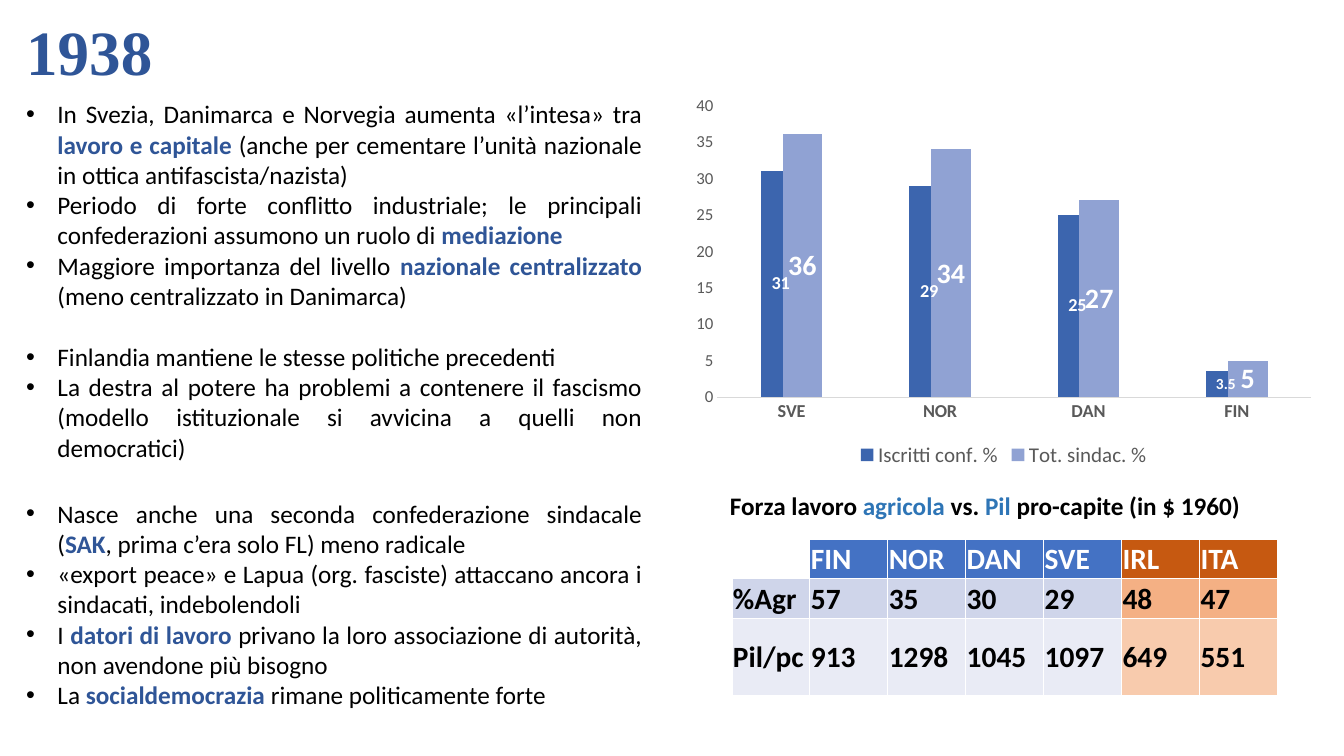
import pptx
import pptx.chart.data
import pptx.dml.color
import pptx.enum.chart
import pptx.enum.text
import pptx.oxml
import pptx.oxml.ns
import pptx.util

Inches, Pt = pptx.util.Inches, pptx.util.Pt
RGB = pptx.dml.color.RGBColor.from_string
ALIGN = pptx.enum.text.PP_ALIGN

COLORS = {
    "navy": "2F5597", "sky": "2E75B6", "black": "000000", "white": "FFFFFF",
    "gray": "595959", "axis": "D9D9D9", "members": "3C65AE", "union": "90A2D3",
}
NORDIC_FILLS = ["4472C4", "CFD5EA", "E9EBF5"]
OTHER_FILLS = ["C65911", "F4B084", "F8CBAD"]


def style(font, size, color, bold=False, name="Calibri"):
    font.size, font.bold, font.name = Pt(size), bold, name
    font.color.rgb = RGB(COLORS[color])


def add_marked_text(paragraph, text, accent, bold=False):
    """Write text in which *starred* parts take the accent colour and bold."""
    for i, part in enumerate(text.split("*")):
        run = paragraph.add_run()
        run.text = part
        style(run.font, 18, accent if i % 2 else "black", bold or i % 2 == 1)


prs = pptx.Presentation()
prs.slide_width, prs.slide_height = Inches(13.33), Inches(7.5)
slide = prs.slides.add_slide(prs.slide_layouts.get_by_name("Two Content"))
year, before_split, after_split = slide.placeholders

# Title
year.left, year.top, year.width, year.height = map(Inches, (0.16, 0.07, 2.28, 0.86))
year.text_frame.text = "1938"
year.text_frame.vertical_anchor = pptx.enum.text.MSO_ANCHOR.TOP
year.text_frame.word_wrap = False
year.text_frame.paragraphs[0].alignment = ALIGN.LEFT
style(year.text_frame.paragraphs[0].runs[0].font, 45, "navy", True, "Times New Roman")

# Bulleted lists: each holds groups of points with a gap between groups
nordic_points = [
    ["In Svezia, Danimarca e Norvegia aumenta «l’intesa» tra *lavoro e capitale *"
     "(anche per cementare l’unità nazionale in ottica antifascista/nazista)",
     "Periodo di forte conflitto industriale; le principali confederazioni "
     "assumono un ruolo di *mediazione*",
     "Maggiore importanza del livello *nazionale centralizzato *"
     "(meno centralizzato in Danimarca)"],
    ["Finlandia mantiene le stesse politiche precedenti",
     "La destra al potere ha problemi a contenere il fascismo (modello "
     "istituzionale si avvicina a quelli non democratici)"],
]
finnish_points = [
    ["Nasce anche una seconda confederazione sindacale (*SAK*, prima c’era solo FL) "
     "meno radicale",
     "«export peace» e Lapua (org. fasciste) attaccano ancora i sindacati, "
     "indebolendoli",
     "I *datori di lavoro* privano la loro associazione di autorità, non avendone "
     "più bisogno",
     "La *socialdemocrazia* rimane politicamente forte"],
]
for body, top, height, groups in [(before_split, 0.93, 3.74, nordic_points),
                                  (after_split, 4.89, 2.22, finnish_points)]:
    body.left, body.top = Inches(0.16), Inches(top)
    body.width, body.height = Inches(6.31), Inches(height)
    frame = body.text_frame
    frame.auto_size = pptx.enum.text.MSO_AUTO_SIZE.NONE
    paragraph = frame.paragraphs[0]
    for g, group in enumerate(groups):
        for n, point in enumerate(group):
            if g or n:
                paragraph = frame.add_paragraph()
            paragraph.alignment = ALIGN.JUSTIFY
            paragraph.space_before = Pt(22 if g and n == 0 else 0)
            props = paragraph._p.get_or_add_pPr()
            props.set("marL", str(Inches(0.31)))
            props.set("indent", str(-Inches(0.31)))
            add_marked_text(paragraph, point.removesuffix("*") if point.count("*") % 2
                            else point, "navy")

# Union membership chart
membership = pptx.chart.data.CategoryChartData()
membership.categories = ["SVE", "NOR", "DAN", "FIN"]
membership.add_series("Iscritti conf. %", [31, 29, 25, 3.5])
membership.add_series("Tot. sindac. %", [36, 34, 27, 5])
chart = slide.shapes.add_chart(
    pptx.enum.chart.XL_CHART_TYPE.COLUMN_CLUSTERED,
    Inches(6.78), Inches(0.87), Inches(6.35), Inches(3.81), membership).chart
style(chart.font, 10, "black")
chart.has_title = False
chart.has_legend = True
chart.legend.position = pptx.enum.chart.XL_LEGEND_POSITION.BOTTOM
chart.legend.include_in_layout = False
style(chart.legend.font, 15, "gray")

countries, percent = chart.category_axis, chart.value_axis
for axis, size, bold in [(countries, 13, True), (percent, 12, False)]:
    style(axis.tick_labels.font, size, "gray", bold)
    axis.major_tick_mark = pptx.enum.chart.XL_TICK_MARK.NONE
    axis.has_major_gridlines = False
countries.format.line.color.rgb = RGB(COLORS["axis"])
countries.format.line.width = Pt(0.75)
percent.format.line.fill.background()
percent.minimum_scale, percent.maximum_scale, percent.major_unit = 0, 40, 5

columns = chart.plots[0]
columns.gap_width, columns.overlap, columns.vary_by_categories = 219, 45, False
center = pptx.enum.chart.XL_LABEL_POSITION.CENTER
for series, color, size in zip(columns.series, ["members", "union"], [13, 20]):
    series.format.fill.solid()
    series.format.fill.fore_color.rgb = RGB(COLORS[color])
    series.data_labels.show_value = True
    series.data_labels.position = center
    style(series.data_labels.font, size, "white", True)
small_label = columns.series[0].points[3].data_label
style(small_label.font, 11, "white", True)
small_label.position = center

# Table heading
heading = slide.shapes.add_textbox(Inches(7.14), Inches(4.82), Inches(5.3), Inches(0.4))
heading.text_frame.word_wrap = False
add_marked_text(heading.text_frame.paragraphs[0],
                "Forza lavoro *agricola* vs. *Pil* pro-capite (in $ 1960)", "sky", True)

# Table of farm labour and income
figures = [
    ["", "FIN", "NOR", "DAN", "SVE", "IRL", "ITA"],
    ["%Agr", "57", "35", "30", "29", "48", "47"],
    ["Pil/pc", "913", "1298", "1045", "1097", "649", "551"],
]
table = slide.shapes.add_table(3, 7, Inches(7.26), Inches(5.35),
                               Inches(5.41), Inches(1.55)).table
for column in table.columns:
    column.width = Inches(5.41 / 7)
for r, (row, height) in enumerate(zip(figures, [0.39, 0.4, 0.76])):
    table.rows[r].height = Inches(height)
    for c, value in enumerate(row):
        cell = table.cell(r, c)
        cell.text = value
        cell.vertical_anchor = pptx.enum.text.MSO_ANCHOR.MIDDLE
        cell.margin_left = cell.margin_right = cell.margin_top = Inches(0.01)
        cell.margin_bottom = 0
        for run in cell.text_frame.paragraphs[0].runs:
            style(run.font, 21, "black" if r else "white", True)
        fill = (OTHER_FILLS if c > 4 else NORDIC_FILLS)[r]
        cell.fill.solid()
        cell.fill.fore_color.rgb = RGB(fill if value else COLORS["white"])
        # White borders, thicker under the header row
        for i, side in enumerate("LRTB"):
            width = Pt(1.5 if (r, side) in [(0, "B"), (1, "T")] else 1)
            cell._tc.get_or_add_tcPr().insert(i, pptx.oxml.parse_xml(
                f'<a:ln{side} {pptx.oxml.ns.nsdecls("a")} w="{width}"><a:solidFill>'
                f'<a:srgbClr val="{COLORS["white"]}"/></a:solidFill></a:ln{side}>'))

prs.save("out.pptx")
